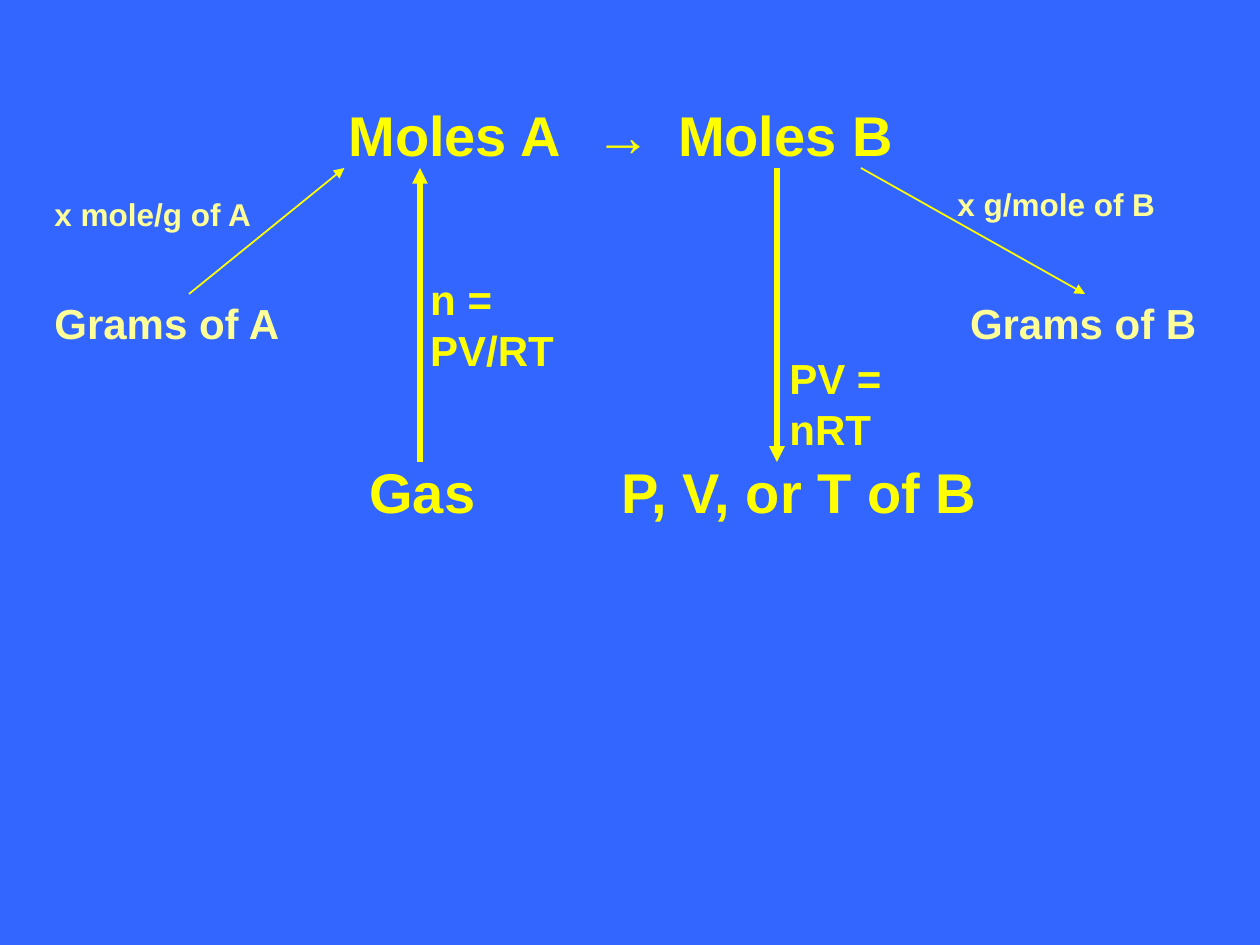
from pptx import Presentation
from pptx.dml.color import RGBColor
from pptx.enum.shapes import MSO_CONNECTOR as Connector
from pptx.enum.text import MSO_AUTO_SIZE as AutoSize
from pptx.oxml.ns import qn
from pptx.util import Inches, Pt
from lxml.etree import SubElement

YELLOW, PALE, BLUE = "FFFF00", "FFFF99", "3366FF"


def color(hex_code):
    return RGBColor.from_string(hex_code)


class Diagram:
    """Draws a text-and-arrow diagram on a grid of 60 columns by 45 rows."""

    font = "Arial"
    columns, rows = 60, 45

    def __init__(self, deck, background):
        self.column = deck.slide_width / self.columns
        self.row = deck.slide_height / self.rows
        self.slide = deck.slides.add_slide(deck.slide_layouts[6])
        fill = self.slide.background.fill
        fill.solid()
        fill.fore_color.rgb = color(background)

    def x(self, columns):
        return round(columns * self.column)

    def y(self, rows):
        return round(rows * self.row)

    def frame(self, left, top, width, height, wrap=False):
        box = self.slide.shapes.add_textbox(
            self.x(left), self.y(top), self.x(width), self.y(height))
        frame = box.text_frame
        frame.word_wrap = wrap
        frame.auto_size = AutoSize.SHAPE_TO_FIT_TEXT
        return frame

    def set_text(self, paragraph, text, size, shade, tabs=(), before=0):
        paragraph.text = text
        paragraph.space_before = Pt(before)
        if tabs:
            stops = SubElement(paragraph._p.get_or_add_pPr(), qn("a:tabLst"))
            for stop in tabs:
                SubElement(stops, qn("a:tab"), pos=str(self.x(stop)), algn="l")
        font = paragraph.font
        font.name, font.size, font.bold = self.font, Pt(size), True
        font.color.rgb = color(shade)

    def label(self, text, left, top, width, height, size, shade, tabs=()):
        frame = self.frame(left, top, width, height)
        self.set_text(frame.paragraphs[0], text, size, shade, tabs)

    def arrow(self, start, end, weight):
        arrow = self.slide.shapes.add_connector(
            Connector.STRAIGHT, self.x(start[0]), self.y(start[1]),
            self.x(end[0]), self.y(end[1]))
        arrow.line.color.rgb = color(YELLOW)
        arrow.line.width = Pt(weight)
        SubElement(arrow.line._get_or_add_ln(), qn("a:tailEnd"), type="triangle")
        SubElement(arrow._element.spPr, qn("a:effectLst"))


def main():
    deck = Presentation()
    deck.slide_width, deck.slide_height = Inches(10), Inches(7.5)
    diagram = Diagram(deck, BLUE)

    conversion = diagram.frame(2, 4.5, 56, 12.6, wrap=True)
    diagram.set_text(conversion.paragraphs[0], "\tMoles A\t→\tMoles B", 32, YELLOW,
                     tabs=(14, 25.75, 29.7))
    diagram.set_text(conversion.add_paragraph(), "Grams of A\tGrams of B", 24, PALE,
                     tabs=(43.6,), before=74)

    moles_row, grams_row, gas_row = 8, 14, 22
    gas_column, pressure_column = 20, 37
    diagram.arrow((9, grams_row), (16.4, moles_row), 1)
    diagram.arrow((41, moles_row), (51.67, grams_row), 1)
    diagram.arrow((gas_column, gas_row), (gas_column, moles_row), 3)
    diagram.arrow((pressure_column, moles_row), (pressure_column, gas_row), 3)

    diagram.label("x mole/g of A", 2, 9, 10.6, 2.4, 18, PALE)
    diagram.label("x g/mole of B", 45, 8.5, 10.6, 2.4, 18, PALE)
    diagram.label("Gas\tP, V, or T of B", 17, 21.5, 30.65, 3.8, 32, YELLOW, tabs=(12,))
    diagram.label("n = PV/RT", 19.9, 12.75, 10.55, 3, 24, YELLOW)
    diagram.label("PV = nRT", pressure_column, 16.5, 10, 3, 24, YELLOW)

    deck.save("out.pptx")


if __name__ == "__main__":
    main()
